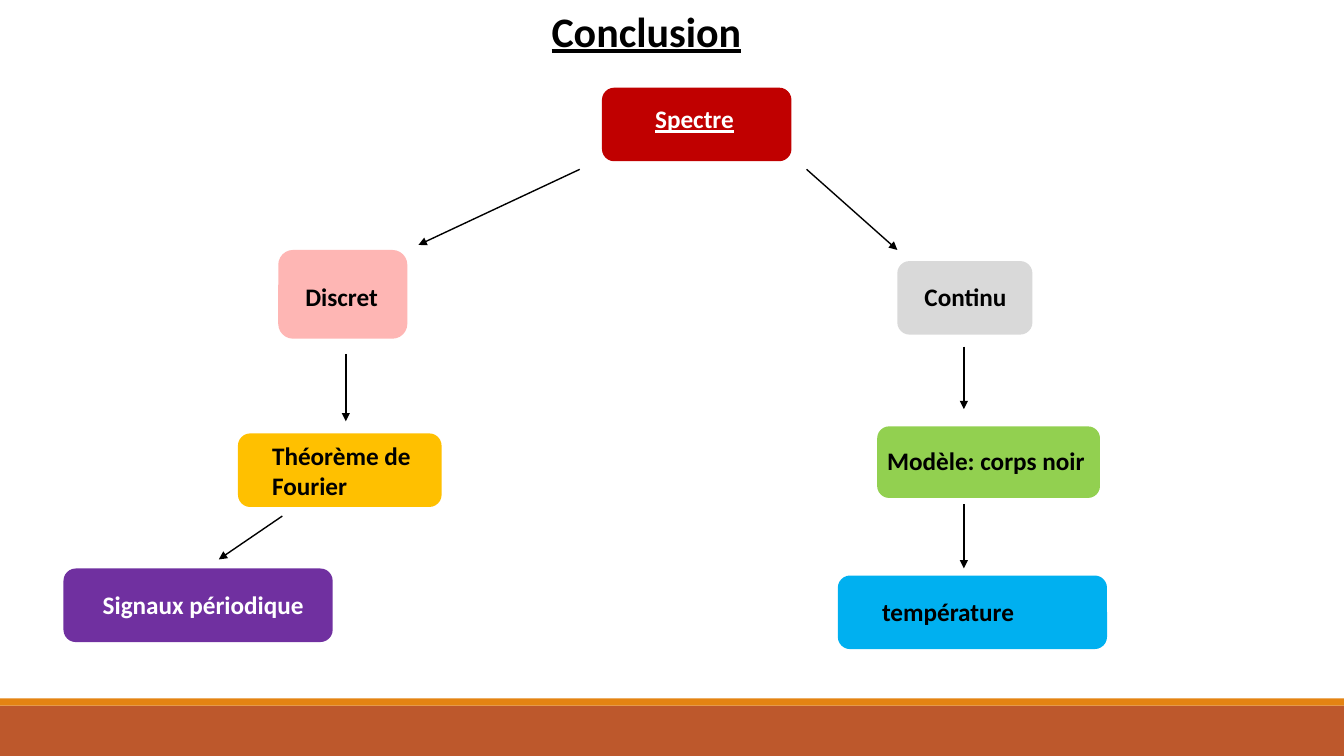
from dataclasses import dataclass

from lxml import etree
from pptx import Presentation
from pptx import util as u
from pptx.dml.color import RGBColor
from pptx.enum import shapes, text
from pptx.oxml import ns

BLACK = RGBColor(0x00, 0x00, 0x00)
WHITE = RGBColor(0xFF, 0xFF, 0xFF)
RED = RGBColor(0xC0, 0x00, 0x00)
PINK = RGBColor(0xFE, 0xB6, 0xB4)
GREY = RGBColor(0xD9, 0xD9, 0xD9)
AMBER = RGBColor(0xFF, 0xC0, 0x00)
GREEN = RGBColor(0x92, 0xD0, 0x50)
PURPLE = RGBColor(0x70, 0x30, 0xA0)
BLUE = RGBColor(0x00, 0xB0, 0xF0)
ORANGE = RGBColor(0xE4, 0x83, 0x12)
RUST = RGBColor(0xBD, 0x58, 0x2C)

Area = tuple[float, float, float, float]
Point = tuple[float, float]


@dataclass(frozen=True)
class Node:
    label: str
    box: Area
    label_box: Area
    fill: RGBColor
    color: RGBColor = BLACK
    underline: bool = False


@dataclass(frozen=True)
class Arrow:
    start: Point
    end: Point


NODES = [
    Node("Spectre", (5.97, 0.87, 1.88, 0.73), (6.4, 0.98, 1.6, 0.4), RED, WHITE, True),
    Node("Discret", (2.76, 2.48, 1.28, 0.88), (2.93, 2.74, 1.4, 0.4), PINK),
    Node("Continu", (8.9, 2.59, 1.34, 0.73), (9.07, 2.74, 1.98, 0.4), GREY),
    Node("Théorème de Fourier", (2.36, 4.3, 2.02, 0.73), (2.6, 4.32, 2.21, 0.71), AMBER),
    Node("Modèle: corps noir", (8.7, 4.23, 2.21, 0.71), (8.7, 4.37, 3.02, 0.4), GREEN),
    Node("Signaux périodique", (0.63, 5.64, 2.67, 0.73), (0.92, 5.8, 2.45, 0.4), PURPLE, WHITE),
    Node("température", (8.31, 5.71, 2.67, 0.73), (8.65, 5.87, 3.02, 0.4), BLUE),
]

ARROWS = [
    Arrow((5.75, 1.68), (4.15, 2.43)),
    Arrow((8, 1.68), (8.9, 2.48)),
    Arrow((3.43, 3.51), (3.43, 4.18)),
    Arrow((9.56, 3.44), (9.56, 4.06)),
    Arrow((2.8, 5.12), (2.17, 5.55)),
    Arrow((9.56, 5), (9.56, 5.64)),
]


def inches(values: tuple[float, ...]) -> list[u.Length]:
    return [u.Inches(v) for v in values]


def add_block(slide, kind, area: Area, fill: RGBColor) -> None:
    sp = slide.shapes.add_shape(kind, *inches(area))
    sp.shadow.inherit = False
    sp.fill.solid()
    sp.fill.fore_color.rgb = fill
    sp.line.fill.background()


def write_text(sp, words: str, size: int, color: RGBColor, underline: bool) -> None:
    tf = sp.text_frame
    frame_format = {
        "word_wrap": True,
        "auto_size": text.MSO_AUTO_SIZE.NONE,
        "vertical_anchor": text.MSO_ANCHOR.TOP,
    }
    for name, value in frame_format.items():
        setattr(tf, name, value)
    p = tf.paragraphs[0]
    p.alignment = text.PP_ALIGN.LEFT
    r = p.add_run()
    r.text = words
    font_format = {"name": "Calibri", "size": u.Pt(size), "bold": True, "underline": underline}
    for name, value in font_format.items():
        setattr(r.font, name, value)
    r.font.color.rgb = color


def add_title(slide, words: str, area: Area) -> None:
    sp = slide.shapes.title
    for name, value in zip(("left", "top", "width", "height"), inches(area)):
        setattr(sp, name, value)
    write_text(sp, words, 30, BLACK, True)


def add_node(slide, node: Node) -> None:
    add_block(slide, shapes.MSO_SHAPE.ROUNDED_RECTANGLE, node.box, node.fill)
    sp = slide.shapes.add_textbox(*inches(node.label_box))
    write_text(sp, node.label, 18, node.color, node.underline)


def add_arrow(slide, arrow: Arrow) -> None:
    ends = inches(arrow.start + arrow.end)
    sp = slide.shapes.add_connector(shapes.MSO_CONNECTOR.STRAIGHT, *ends)
    sp.line.color.rgb = BLACK
    sp.line.width = u.Pt(1)
    etree.SubElement(sp.line._get_or_add_ln(), ns.qn("a:tailEnd"), type="triangle")
    etree.SubElement(sp._element.spPr, ns.qn("a:effectLst"))


def main() -> None:
    prs = Presentation()
    prs.slide_width, prs.slide_height = inches((13.33, 7.5))
    s = prs.slides.add_slide(prs.slide_layouts[5])
    add_block(s, shapes.MSO_SHAPE.RECTANGLE, (0, 7, 13.33, 0.5), RUST)
    add_block(s, shapes.MSO_SHAPE.RECTANGLE, (0, 6.93, 13.33, 0.07), ORANGE)
    add_title(s, "Conclusion", (5.37, 0, 4.12, 0.61))
    for node in NODES:
        add_node(s, node)
    for arrow in ARROWS:
        add_arrow(s, arrow)
    prs.save("out.pptx")


if __name__ == "__main__":
    main()
